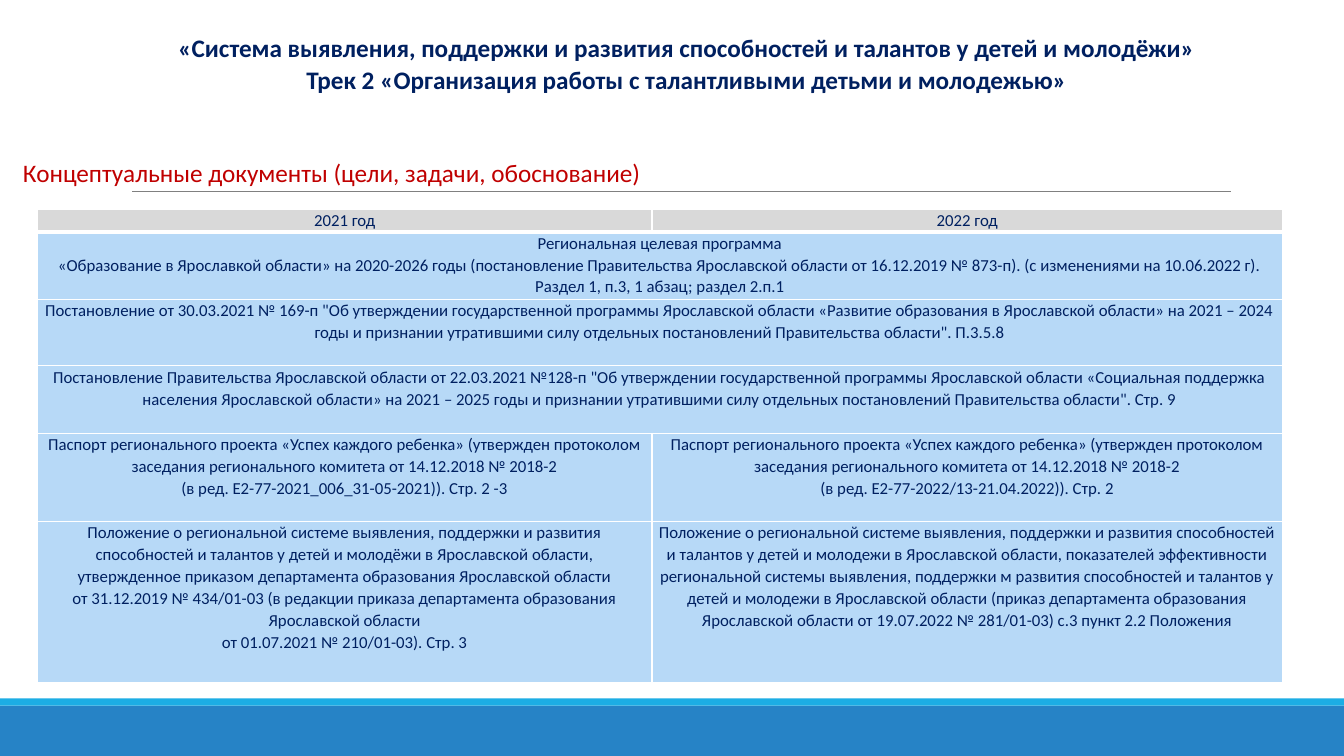
from lxml import etree
from pptx import Presentation
from pptx.dml.color import RGBColor
from pptx.enum.shapes import MSO_CONNECTOR, MSO_SHAPE
from pptx.enum.text import MSO_AUTO_SIZE, PP_ALIGN
from pptx.oxml import parse_xml
from pptx.oxml.ns import nsdecls, qn
from pptx.util import Cm, Pt

NAVY = RGBColor(0x00, 0x20, 0x60)
RED = RGBColor(0xC0, 0x00, 0x00)
GRAY = RGBColor(0x80, 0x80, 0x80)
HEADER_FILL = RGBColor(0xD9, 0xD9, 0xD9)
BODY_FILL = RGBColor(0xB7, 0xD9, 0xF7)
BLUE = RGBColor(0x26, 0x83, 0xC6)
CYAN = RGBColor(0x1C, 0xAD, 0xE4)

TITLE = [
    "«Система выявления, поддержки и развития способностей и талантов у детей и молодёжи»",
    "Трек 2 «Организация работы с талантливыми детьми и молодежью»",
]
SUBTITLE = ["Концептуальные документы (цели, задачи, обоснование)"]
PASSPORT = (
    "Паспорт регионального проекта «Успех каждого ребенка» (утвержден протоколом "
    "заседания регионального комитета от 14.12.2018 № 2018-2"
)
ROWS = [
    (0.56, [["2021 год"], ["2022 год"]]),
    (1.7, [[
        "Региональная целевая программа",
        "«Образование в Ярославкой области» на 2020-2026 годы (постановление Правительства "
        "Ярославской области от 16.12.2019 № 873-п). (с изменениями на 10.06.2022 г). "
        "Раздел 1, п.3, 1 абзац; раздел 2.п.1",
    ]]),
    (1.68, [[
        "Постановление от 30.03.2021 № 169-п \"Об утверждении государственной программы "
        "Ярославской области «Развитие образования в Ярославской области» на 2021 – 2024 "
        "годы и признании утратившими силу отдельных постановлений Правительства области\". П.3.5.8",
    ]]),
    (1.7, [[
        "Постановление Правительства Ярославской области от 22.03.2021 №128-п \"Об утверждении "
        "государственной программы Ярославской области «Социальная поддержка населения "
        "Ярославской области» на 2021 – 2025 годы и признании утратившими силу отдельных "
        "постановлений Правительства области\". Стр. 9",
    ]]),
    (2.22, [
        [PASSPORT, "(в ред. Е2-77-2021_006_31-05-2021)). Стр. 2 -3"],
        [PASSPORT, "(в ред. Е2-77-2022/13-21.04.2022)). Стр. 2"],
    ]),
    (4.06, [
        [
            "Положение о региональной системе выявления, поддержки и развития способностей и "
            "талантов у детей и молодёжи в Ярославской области, утвержденное приказом "
            "департамента образования Ярославской области",
            "от 31.12.2019 № 434/01-03 (в редакции приказа департамента образования "
            "Ярославской области",
            "от 01.07.2021 № 210/01-03). Стр. 3",
        ],
        [
            "Положение о региональной системе выявления, поддержки и развития способностей и "
            "талантов у детей и молодежи в Ярославской области, показателей эффективности "
            "региональной системы выявления, поддержки м развития способностей и талантов у "
            "детей и молодежи в Ярославской области (приказ департамента образования "
            "Ярославской области от 19.07.2022 № 281/01-03) с.3 пункт 2.2 Положения",
        ],
    ]),
]
COLUMN_WIDTHS = [15.49, 15.89]
FOOTER_BARS = [(17.78, 1.27, BLUE), (17.6, 0.18, CYAN)]
SLIDE_WIDTH, SLIDE_HEIGHT = 33.87, 19.05


def write_lines(text_frame, lines, size, color, align=PP_ALIGN.CENTER, bold=False, spacing=1.07):
    text_frame.text = "\n".join(lines)
    for paragraph in text_frame.paragraphs:
        paragraph.alignment = align
        paragraph.line_spacing = spacing
        for run in paragraph.runs:
            run.font.name = "Calibri"
            run.font.size = Pt(size)
            run.font.bold = bold
            run.font.color.rgb = color


def add_text(slide, box, lines, wrap, **style):
    text_frame = slide.shapes.add_textbox(*map(Cm, box)).text_frame
    text_frame.word_wrap = wrap
    text_frame.auto_size = MSO_AUTO_SIZE.SHAPE_TO_FIT_TEXT
    write_lines(text_frame, lines, 18, **style)


def add_borders(cell, bottom_width):
    properties = cell._tc.get_or_add_tcPr()
    for side, width in (("L", 1), ("R", 1), ("T", 1), ("B", bottom_width)):
        properties.append(parse_xml(
            f'<a:ln{side} {nsdecls("a")} w="{Pt(width)}"><a:solidFill>'
            f'<a:srgbClr val="FFFFFF"/></a:solidFill></a:ln{side}>'
        ))


def add_documents_table(slide):
    heights = [height for height, _ in ROWS]
    box = (0.94, 5.28, sum(COLUMN_WIDTHS), sum(heights))
    table = slide.shapes.add_table(len(ROWS), len(COLUMN_WIDTHS), *map(Cm, box)).table
    table.first_row = False
    table.horz_banding = False
    for column, width in zip(table.columns, COLUMN_WIDTHS):
        column.width = Cm(width)
    for index, (height, entries) in enumerate(ROWS):
        row = table.rows[index]
        row.height = Cm(height)
        for cell in row.cells:
            add_borders(cell, 1 if index else 3)
            cell.fill.solid()
            cell.fill.fore_color.rgb = BODY_FILL if index else HEADER_FILL
            cell.margin_left = cell.margin_right = Cm(0.15)
            cell.margin_top = cell.margin_bottom = 0
        if len(entries) == 1:
            row.cells[0].merge(row.cells[1])
        for cell, lines in zip(row.cells, entries):
            write_lines(cell.text_frame, lines, 12, NAVY)


def main():
    presentation = Presentation()
    presentation.slide_width = Cm(SLIDE_WIDTH)
    presentation.slide_height = Cm(SLIDE_HEIGHT)
    slide = presentation.slides.add_slide(presentation.slide_layouts[6])

    for top, height, color in FOOTER_BARS:
        bar = slide.shapes.add_shape(
            MSO_SHAPE.RECTANGLE, 0, Cm(top), Cm(SLIDE_WIDTH), Cm(height))
        bar.shadow.inherit = False
        bar.fill.solid()
        bar.fill.fore_color.rgb = color
        bar.line.fill.background()

    rule = slide.shapes.add_connector(
        MSO_CONNECTOR.STRAIGHT, Cm(3.33), Cm(4.83), Cm(31.01), Cm(4.83))
    rule.line.color.rgb = GRAY
    rule.line.width = Pt(0.5)
    etree.SubElement(rule._element.spPr, qn("a:effectLst"))

    add_text(slide, (4.06, 0.64, 26.49, 1.85), TITLE, True, color=NAVY, bold=True)
    add_text(slide, (0.33, 3.78, 16.66, 1.09), SUBTITLE, False,
             color=RED, align=PP_ALIGN.JUSTIFY)
    add_documents_table(slide)
    presentation.save("out.pptx")


if __name__ == "__main__":
    main()
